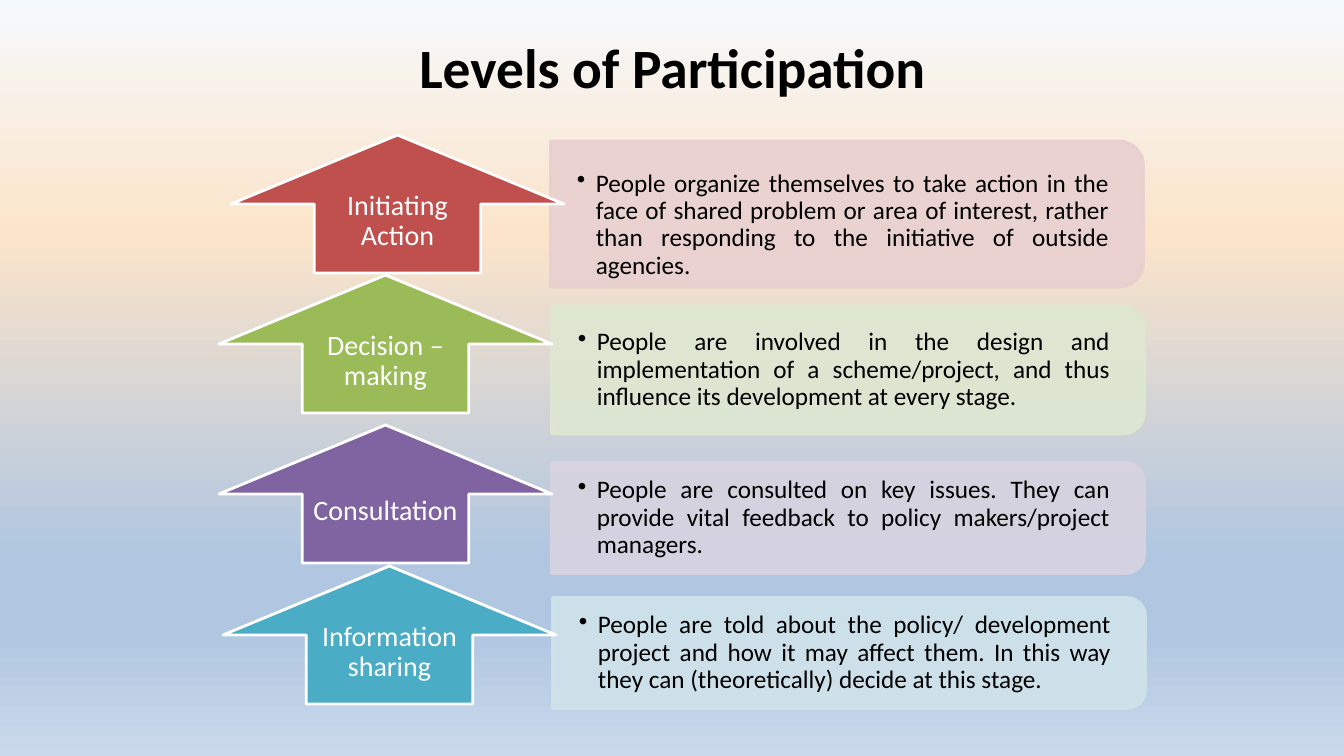
from lxml import etree
from pptx import Presentation
from pptx import util as u
from pptx.dml.color import RGBColor
from pptx.enum import shapes, text
from pptx.oxml.ns import qn

PX = 914400 / 100.8
BLACK = RGBColor(0x00, 0x00, 0x00)
WHITE = RGBColor(0xFF, 0xFF, 0xFF)
RED, PALE_RED = RGBColor(0xC0, 0x50, 0x4D), RGBColor(0xE8, 0xD0, 0xD0)
GREEN, PALE_GREEN = RGBColor(0x9B, 0xBB, 0x59), RGBColor(0xDE, 0xE7, 0xD1)
PURPLE, PALE_PURPLE = RGBColor(0x80, 0x64, 0xA2), RGBColor(0xD8, 0xD3, 0xE0)
TEAL, PALE_TEAL = RGBColor(0x4B, 0xAC, 0xC6), RGBColor(0xD0, 0xE3, 0xEA)
SKY = [(0, RGBColor(0xF6, 0xF9, 0xFC)), (31, RGBColor(0xFB, 0xE4, 0xCA)),
       (74, RGBColor(0xB0, 0xC6, 0xE1)), (83, RGBColor(0xB0, 0xC6, 0xE1)),
       (100, RGBColor(0xCA, 0xD9, 0xEB))]


def px(*lengths):
    return [u.Emu(round(n * PX)) for n in lengths]


def write(shape, words, size, color, align, inset_x, inset_y, bold=False, bullet=False):
    tf = shape.text_frame
    left, top = px(inset_x, inset_y)
    frame = dict(word_wrap=True, auto_size=text.MSO_AUTO_SIZE.NONE,
                 vertical_anchor=text.MSO_ANCHOR.MIDDLE, margin_left=left,
                 margin_right=left, margin_top=top, margin_bottom=top)
    for name, value in frame.items():
        setattr(tf, name, value)
    p = tf.paragraphs[0]
    p.alignment = align
    p.line_spacing = 1.0 if bold else 0.9
    if bullet:
        pPr = p._p.get_or_add_pPr()
        pPr.set("marL", "171450")
        pPr.set("indent", "-171450")
        etree.SubElement(pPr, qn("a:buChar")).set("char", "•")
    r = p.add_run()
    r.text = words
    for name, value in dict(name="Calibri", size=u.Pt(size), bold=bold).items():
        setattr(r.font, name, value)
    r.font.color.rgb = color


prs = Presentation()
prs.slide_width, prs.slide_height = px(1344, 756)
s = prs.slides.add_slide(prs.slide_layouts[5])

# Background gradient, top to bottom
s.background.fill.gradient()
grad = s.element.find(".//" + qn("a:gradFill"))
for child in list(grad):
    grad.remove(child)
stops = etree.SubElement(grad, qn("a:gsLst"))
for percent, color in SKY:
    stop = etree.SubElement(stops, qn("a:gs"), pos=str(percent * 1000))
    etree.SubElement(stop, qn("a:srgbClr"), val=str(color))
etree.SubElement(grad, qn("a:lin"), ang="5400000", scaled="0")

# Title
title = s.shapes.title
title.left, title.top, title.width, title.height = px(219, 30, 907, 73)
write(title, "Levels of Participation", 39.6, BLACK, text.PP_ALIGN.CENTER, 10, 5, bold=True)

# Levels: label, description, colours, arrow left and top,
# panel centre x and y, panel height, text centre y
levels = [
    ("Initiating Action",
     "People organize themselves to take action in the face of shared problem or area of "
     "interest, rather than responding to the initiative of outside agencies.",
     RED, PALE_RED, 231, 135, 847, 214, 146, 225),
    ("Decision – making",
     "People are involved in the design and implementation of a scheme/project, and thus "
     "influence its development at every stage.",
     GREEN, PALE_GREEN, 219, 275, 848, 370, 128, 370),
    ("Consultation",
     "People are consulted on key issues. They can provide vital feedback to policy "
     "makers/project managers.",
     PURPLE, PALE_PURPLE, 219, 425, 848, 518, 111, 518),
    ("Information sharing",
     "People are told about the policy/ development project and how it may affect them. "
     "In this way they can (theoretically) decide at this stage.",
     TEAL, PALE_TEAL, 223, 566, 849, 653, 111, 653),
]
PANEL_W, TEXT_W, TEXT_H = 593, 586, 116
for label, words, color, pale, x, y, cx, cy, h, text_cy in levels:
    # Panel, turned so that its rounded corners face right
    panel = s.shapes.add_shape(shapes.MSO_SHAPE.ROUND_2_SAME_RECTANGLE,
                               *px(cx - h / 2, cy - PANEL_W / 2, h, PANEL_W))
    panel.rotation = 90
    arrow = s.shapes.add_shape(shapes.MSO_SHAPE.UP_ARROW, *px(x, y, 333, 138))
    for shape, fill, line in ((panel, pale, pale), (arrow, color, WHITE)):
        shape.shadow.inherit = False
        shape.fill.solid()
        shape.fill.fore_color.rgb = fill
        shape.line.color.rgb = line
        shape.line.width = u.Pt(2)
    for rgb in panel._element.spPr.iter(qn("a:srgbClr")):
        etree.SubElement(rgb, qn("a:alpha"), val="90000")

    # Description and arrow label
    box = s.shapes.add_textbox(*px(cx - 297, text_cy - TEXT_H / 2, TEXT_W, TEXT_H))
    write(box, words, 18, BLACK, text.PP_ALIGN.JUSTIFY, 27, 14, bullet=True)
    write(arrow, label, 20, WHITE, text.PP_ALIGN.CENTER, 8, 4)

prs.save("out.pptx")
